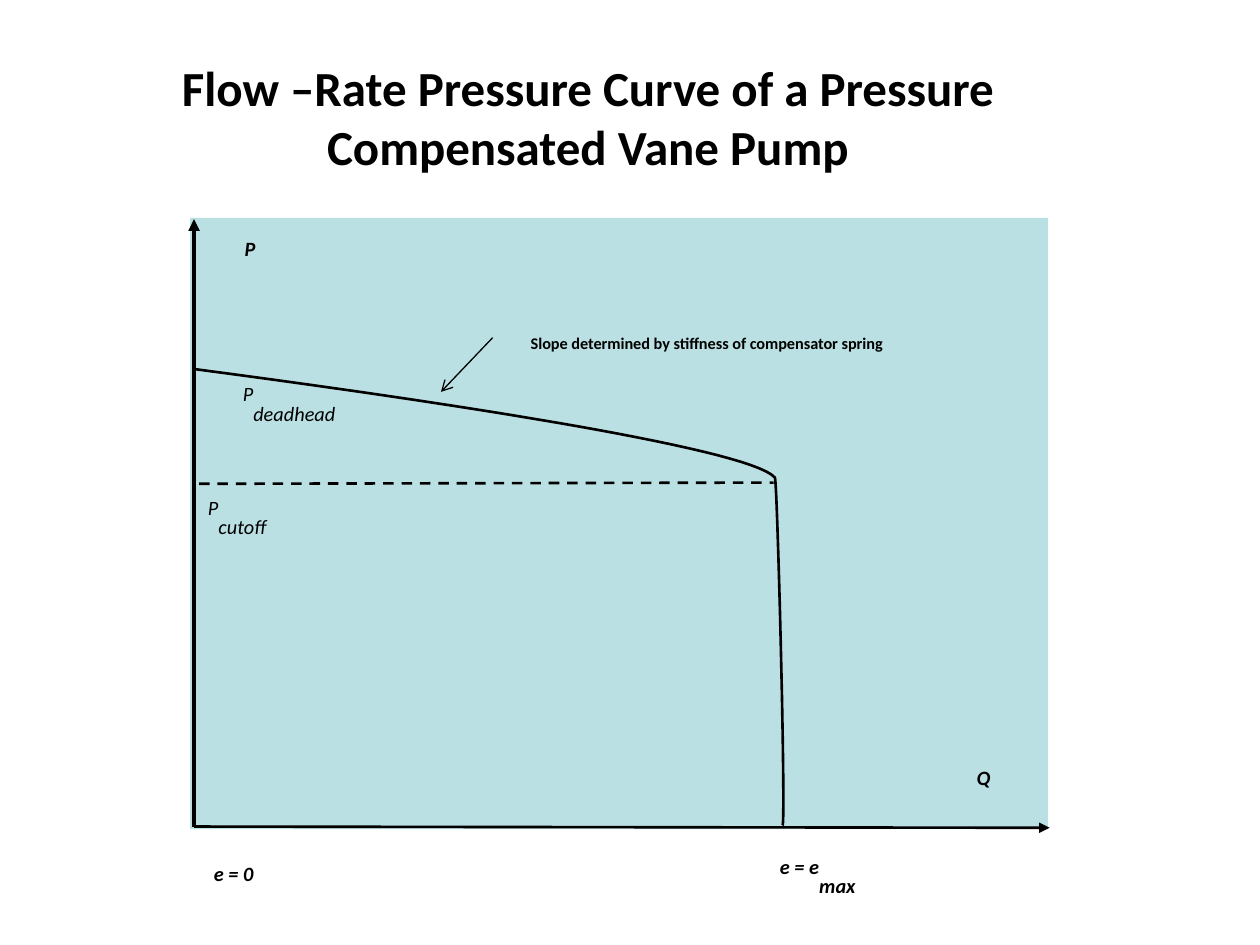
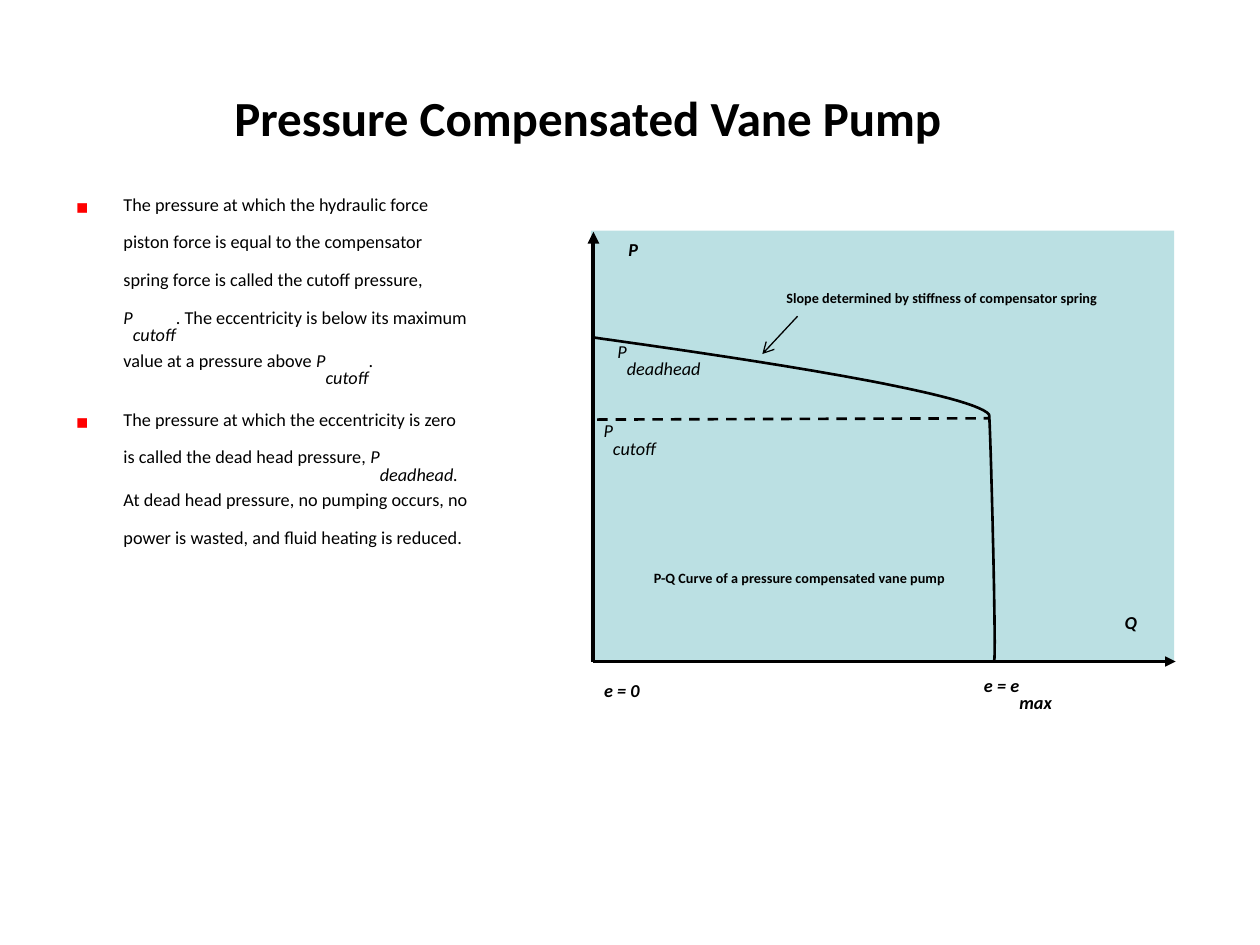
from lxml.etree import SubElement as Sub
from pptx import Presentation
from pptx.dml.color import RGBColor as RGB
from pptx.enum.dml import MSO_LINE as Dash
from pptx.enum.shapes import MSO_CONNECTOR as Link, MSO_SHAPE as Shape
from pptx.enum.text import MSO_ANCHOR as Anchor, MSO_AUTO_SIZE as Fit, PP_ALIGN as Align
from pptx.oxml.ns import qn
from pptx.util import Pt

PX = 9144
BLACK, PALE, RED = "000000", "BBE0E3", "FF0000"
FACE = "Calibri"
RISE, DROP = "30000", "-25000"
STEPS = 40


def hue(code):
    return RGB.from_string(code)


def write(para, runs, size, bold=None, slant=None):
    for text, low, tilt in runs:
        run = para.add_run()
        run.text = text
        if tilt:
            run.font.italic = True
        run._r.get_or_add_rPr().set("baseline", DROP if low else RISE)
    font = para.font
    font.name, font.size, font.bold, font.italic = FACE, Pt(size), bold, slant
    font.color.rgb = hue(BLACK)


slope = "Slope determined by stiffness of compensator spring"
notes = [
    [("The pressure at which the hydraulic force piston force is equal to the "
      "compensator spring force is called the cutoff pressure, ", False, False),
     ("P", False, True), ("cutoff", True, True),
     (". The eccentricity is below its maximum value at a pressure above ", False, False),
     ("P", False, True), ("cutoff", True, True), (".", False, False)],
    [("The pressure at which the eccentricity is zero is called the dead head pressure, ",
      False, False),
     ("P", False, True), ("deadhead. ", True, True),
     ("At dead head pressure, no pumping occurs, no power is wasted, "
      "and fluid heating is reduced.", False, False)],
]

plots = [
    dict(
        title="Flow –Rate Pressure Curve of a Pressure Compensated Vane Pump",
        layout=5, size=20, small=16,
        panel=(151, 173, 681, 485),
        flow=(154, 656, 833, 657), press=(154, 656, 154, 174),
        cutoff=(158, 384, 614, 383), arrow=(391, 268, 350, 311),
        curve=[(621, 655), (624, 659), (617, 381), (615, 379),
               (588, 348), (160, 294), (155, 293)],
        marks=[("P", "deadhead", 165, 294, 129, 49), ("P", "cutoff", 165, 384, 129, 49),
               ("Q", "", 752, 596, 57, 49), ("P", "", 170, 176, 57, 49),
               ("e = e", "max", 568, 669, 162, 49), ("e = 0", "", 133, 672, 105, 49)],
        captions=[(slope, 369, 217, 384, 117)],
    ),
    dict(
        title="Pressure Compensated Vane Pump",
        layout=1, size=18, small=14,
        panel=(469, 183, 463, 342),
        flow=(471, 525, 933, 525), press=(471, 525, 471, 184),
        cutoff=(474, 333, 784, 332), arrow=(633, 251, 605, 281),
        curve=[(789, 524), (791, 527), (786, 331), (785, 329),
               (767, 307), (476, 269), (472, 268)],
        marks=[("P", "deadhead", 479, 269, 88, 30), ("P", "cutoff", 479, 332, 88, 30),
               ("Q", "", 878, 482, 39, 30), ("P", "", 483, 186, 39, 30),
               ("e = e", "max", 753, 534, 110, 30), ("e = 0", "", 458, 536, 71, 30)],
        captions=[(slope, 617, 215, 261, 48),
                  ("P-Q Curve of a pressure compensated vane pump", 504, 437, 261, 48)],
    ),
]

deck = Presentation()
deck.slide_width, deck.slide_height = 1000 * PX, 750 * PX

for plot in plots:
    slide = deck.slides.add_slide(deck.slide_layouts[plot["layout"]])
    shapes = slide.shapes

    title = shapes.title
    title.left, title.top, title.width, title.height = [n * PX for n in (83, 30, 767, 125)]
    title.text_frame.text = plot["title"]
    head = title.text_frame.paragraphs[0]
    head.alignment = Align.CENTER
    head.font.name, head.font.size, head.font.bold = FACE, Pt(28), True
    head.font.color.rgb = hue(BLACK)

    if plot["layout"] == 1:
        body = slide.placeholders[1]
        body.left, body.top, body.width, body.height = [n * PX for n in (50, 145, 332, 540)]
        frame = body.text_frame
        frame.auto_size = Fit.NONE
        for i, runs in enumerate(notes):
            para = frame.add_paragraph() if i else frame.paragraphs[0]
            para.space_before = Pt(9 * i)
            props = para._p.get_or_add_pPr()
            props.set("marL", str(38 * PX))
            props.set("indent", str(-38 * PX))
            Sub(Sub(props, qn("a:buClr")), qn("a:srgbClr")).set("val", RED)
            Sub(props, qn("a:buSzPct")).set("val", "120000")
            Sub(props, qn("a:buFont")).set("typeface", FACE)
            Sub(props, qn("a:buChar")).set("char", "▪")
            write(para, runs, plot["size"])

    panel = shapes.add_shape(Shape.RECTANGLE, *[n * PX for n in plot["panel"]])
    panel.shadow.inherit = False
    panel.fill.solid()
    panel.fill.fore_color.rgb = hue(PALE)
    panel.line.fill.background()

    for name, width, tip in [("flow", 1.5, "triangle"), ("press", 2.25, "triangle"),
                             ("cutoff", 1.5, None), ("arrow", 0.75, "arrow")]:
        line = shapes.add_connector(Link.STRAIGHT, *[n * PX for n in plot[name]])
        line.line.color.rgb = hue(BLACK)
        line.line.width = Pt(width)
        if tip:
            Sub(line.line._get_or_add_ln(), qn("a:tailEnd")).set("type", tip)
        else:
            line.line.dash_style = Dash.DASH
        Sub(line._element.spPr, qn("a:effectLst"))

    knots = plot["curve"]
    points = []
    for k in (0, 3):
        for step in range(1, STEPS + 1):
            t = step / STEPS
            u = 1 - t
            parts = (u ** 3, 3 * u * u * t, 3 * u * t * t, t ** 3)
            points.append([round(PX * sum(w * knot[axis] for w, knot
                                          in zip(parts, knots[k:k + 4])))
                           for axis in (0, 1)])
    pen = shapes.build_freeform(knots[0][0] * PX, knots[0][1] * PX)
    pen.add_line_segments(points, close=False)
    curve = pen.convert_to_shape()
    curve.shadow.inherit = False
    curve.fill.background()
    curve.line.color.rgb = hue(BLACK)
    curve.line.width = Pt(1.5)

    labels = [(text, low, spot, plot["size"], low in ("", "max"), True)
              for text, low, *spot in plot["marks"]]
    labels += [(text, "", spot, plot["small"], True, False)
               for text, *spot in plot["captions"]]
    for text, low, spot, size, bold, slant in labels:
        frame = shapes.add_textbox(*[n * PX for n in spot]).text_frame
        frame.word_wrap = True
        frame.vertical_anchor = Anchor.MIDDLE
        frame.margin_left = frame.margin_right = frame.margin_top = frame.margin_bottom = 0
        para = frame.paragraphs[0]
        para.alignment = Align.LEFT if low == "cutoff" else Align.CENTER
        runs = [(text, False, False)] + ([(low, True, False)] if low else [])
        write(para, runs, size, bold, slant)

deck.save("out.pptx")
